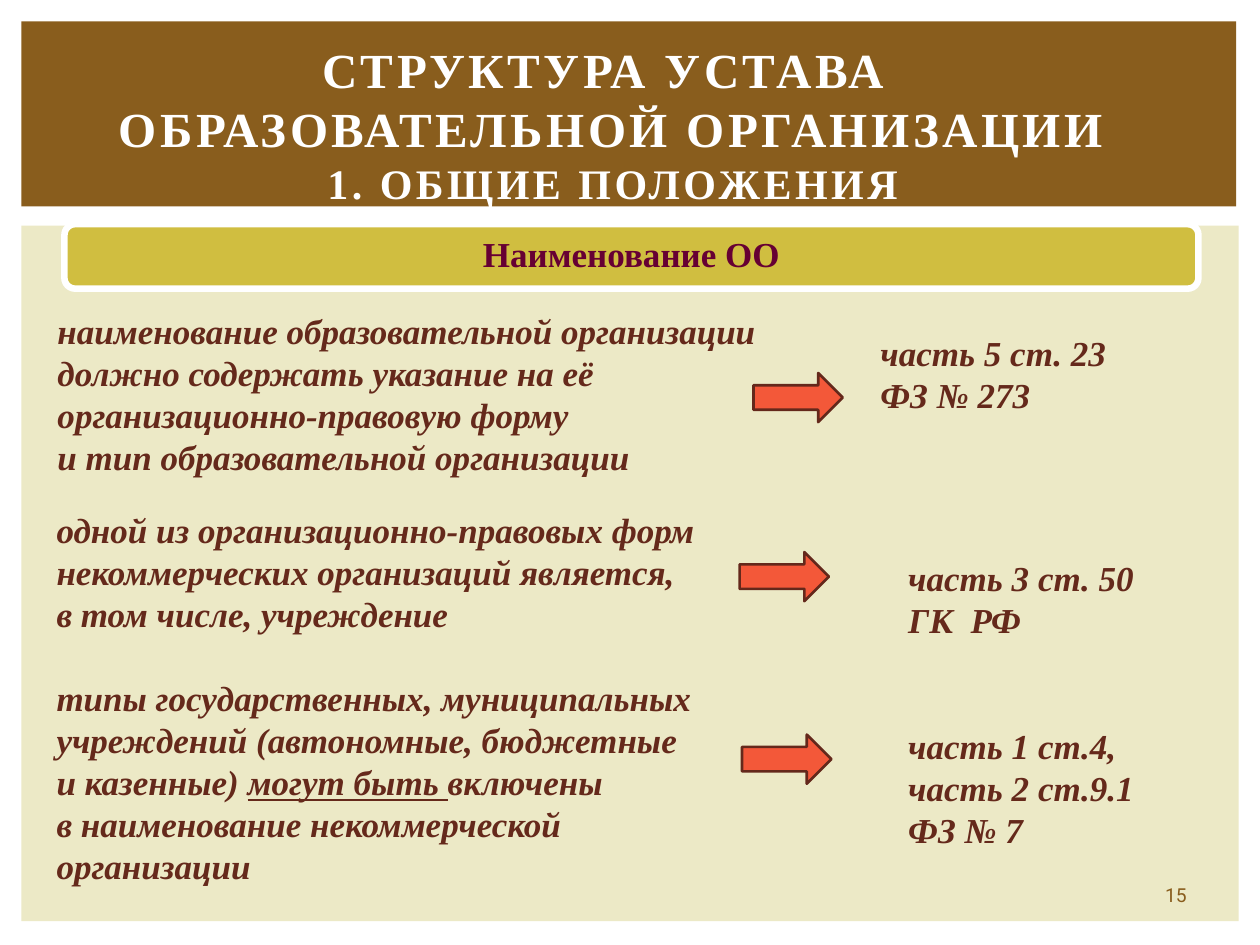
"""Build a slide on the naming rules in the charter of an educational organisation."""
from pptx import Presentation
from pptx.dml.color import RGBColor
from pptx.enum.shapes import MSO_SHAPE as Shape
from pptx.enum.text import MSO_ANCHOR as Anchor, MSO_AUTO_SIZE as AutoSize, PP_ALIGN as Align
from pptx.util import Cm, Pt

SERIF = "Times New Roman"
BROWN, TEXT_BROWN = "895D1D", "65291B"


def color(value):
    return RGBColor.from_string(value)


def add_block(kind, left, top, width, height, fill, line=None, weight=0):
    block = slide.shapes.add_shape(kind, Cm(left), Cm(top), Cm(width), Cm(height))
    block.shadow.inherit = False
    block.fill.solid()
    block.fill.fore_color.rgb = color(fill)
    if line:
        block.line.color.rgb = color(line)
        block.line.width = Pt(weight)
    else:
        block.line.fill.background()
    return block


deck = Presentation()
deck.slide_width, deck.slide_height = Cm(25.4), Cm(19.05)
slide = deck.slides.add_slide(deck.slide_layouts[5])

title = slide.shapes.title
add_block(Shape.RECTANGLE, 0.43, 4.55, 24.54, 14.02, "ECE9C6")
add_block(Shape.RECTANGLE, 0.43, 0.43, 24.49, 3.73, BROWN)
slide.shapes._spTree.append(title._element)

title.left, title.top, title.width, title.height = Cm(0.66), Cm(1.12), Cm(23.39), Cm(2.74)
title.text_frame.auto_size = AutoSize.NONE
title.text_frame.vertical_anchor = Anchor.MIDDLE
para = title.text_frame.paragraphs[0]
para.alignment = Align.CENTER
for text, size in [
    ("СТРУКТУРА УСТАВА ", 28),
    ("ОБРАЗОВАТЕЛЬНОЙ ОРГАНИЗАЦИИ", 28),
    ("1. ОБЩИЕ ПОЛОЖЕНИЯ", 24),
]:
    if para.runs:
        para.add_line_break()
    span = para.add_run()
    span.text = text
    span.font.name, span.font.size, span.font.bold = SERIF, Pt(size), True
    span.font.color.rgb = color("FFFFFF")
    span.font._element.set("spc", "200")

heading = add_block(Shape.ROUNDED_RECTANGLE, 1.3, 4.52, 22.86, 1.3, "D0BE40", "FFFFFF", 3.75)
heading.text_frame.vertical_anchor = Anchor.MIDDLE
para = heading.text_frame.paragraphs[0]
para.text = "Наименование ОО"
para.alignment = Align.CENTER
para.line_spacing = 0.9
para.font.name, para.font.size, para.font.bold = SERIF, Pt(20), True
para.font.color.rgb = color("660033")

passages = [
    (0.91, 6.12, 16.15, 3.68, [
        (0, ["наименование образовательной организации должно содержать указание "
             "на её организационно-правовую форму"]),
        (0, ["и тип образовательной организации"]),
    ]),
    (17.5, 6.55, 5.46, 1.96, [(0, ["часть 5 ст. 23"]), (0, ["ФЗ № 273"])]),
    (0.89, 10.13, 13.41, 8, [
        (0, ["одной из организационно-правовых форм некоммерческих организаций "
             "является, в том числе, учреждение"]),
        (24, ["типы государственных, муниципальных учреждений "
              "(автономные, бюджетные и казенные) ", "могут быть ", "включены"]),
        (0, ["в наименование некоммерческой организации"]),
    ]),
    (18.06, 11.09, 5.21, 6.2, [
        (0, ["часть 3 ст. 50"]),
        (0, ["ГК  РФ"]),
        (48, ["часть 1 ст.4, часть 2 ст.9.1"]),
        (0, ["ФЗ № 7"]),
    ]),
]
for left, top, width, height, paragraphs in passages:
    box = slide.shapes.add_textbox(Cm(left), Cm(top), Cm(width), Cm(height))
    frame = box.text_frame
    frame.word_wrap = True
    for number, (space, texts) in enumerate(paragraphs):
        para = frame.add_paragraph() if number else frame.paragraphs[0]
        para.space_before = Pt(space)
        para.font.name, para.font.size = SERIF, Pt(20)
        para.font.bold = para.font.italic = True
        para.font.color.rgb = color(TEXT_BROWN)
        for text in texts:
            span = para.add_run()
            span.text = text
            if text == "могут быть ":
                span.font.underline = True

for left, top in [(15.19, 7.52), (14.91, 11.13), (14.96, 14.81)]:
    add_block(Shape.RIGHT_ARROW, left, top, 1.8, 0.99, "F35839", "64281B", 1.5)

page_number = slide.shapes.add_textbox(Cm(22.89), Cm(17.65), Cm(1.63), Cm(0.76))
page_number.text_frame.vertical_anchor = Anchor.MIDDLE
para = page_number.text_frame.paragraphs[0]
para.text = "15"
para.alignment = Align.CENTER
para.font.name, para.font.size = "Roboto", Pt(11)
para.font.color.rgb = color(BROWN)

deck.save("out.pptx")
